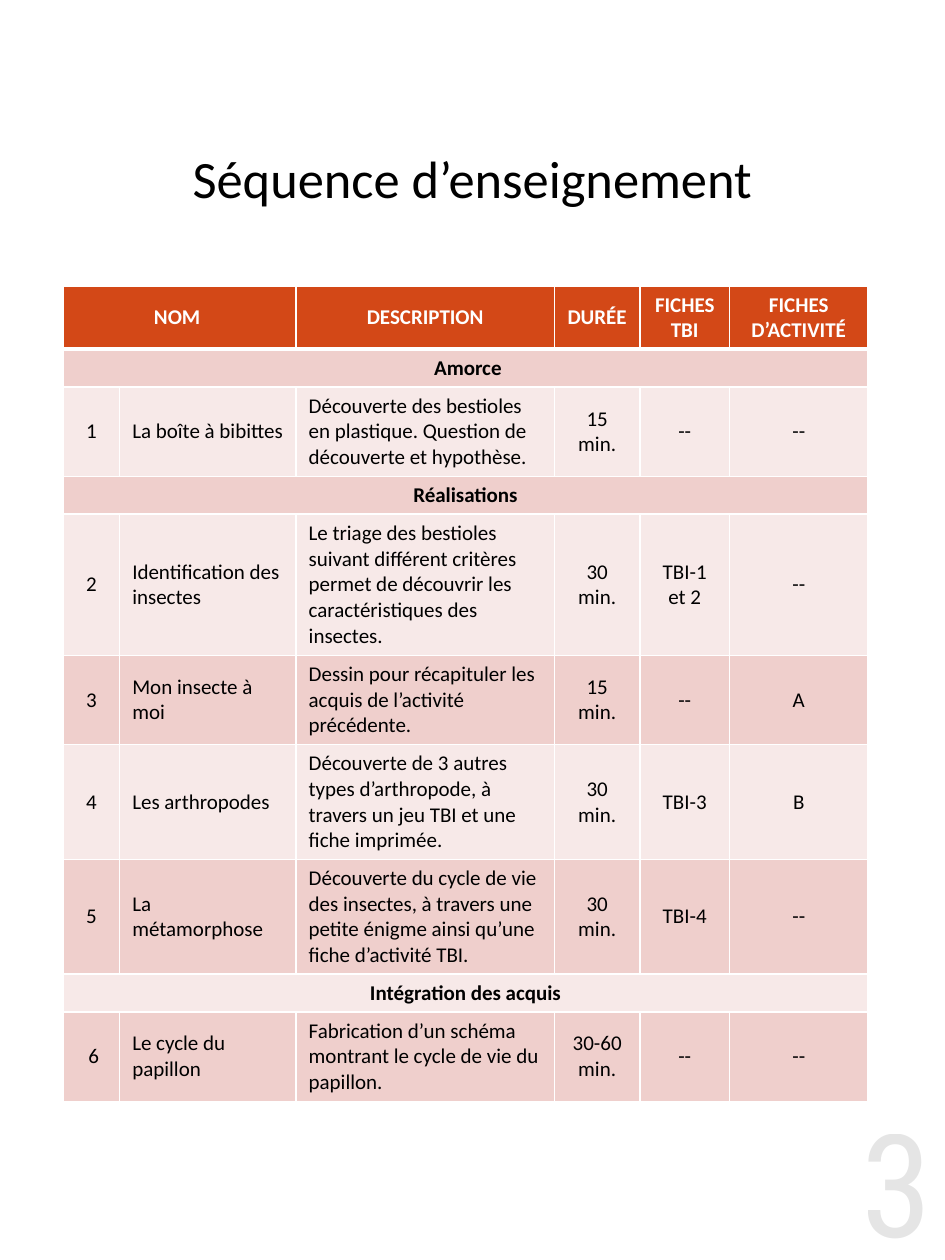
from dataclasses import dataclass

from lxml import etree
from pptx import Presentation
from pptx.dml.color import RGBColor
from pptx.enum.text import MSO_ANCHOR, PP_ALIGN
from pptx.oxml.ns import qn
from pptx.util import Inches, Pt

LEFT, CENTER, RIGHT = PP_ALIGN.LEFT, PP_ALIGN.CENTER, PP_ALIGN.RIGHT
MIDDLE = MSO_ANCHOR.MIDDLE


@dataclass(frozen=True)
class Theme:
    font: str = "Calibri"
    number_font: str = "Roboto Condensed"
    black: str = "000000"
    white: str = "FFFFFF"
    header: str = "D34817"
    band_dark: str = "EFCFCC"
    band_light: str = "F7E9E8"
    title_size: int = 30
    table_size: int = 12
    number_size: int = 82
    number_opacity: int = 10


@dataclass(frozen=True)
class Section:
    name: str
    height: float = 0.3


@dataclass(frozen=True)
class Activity:
    number: str
    name: str
    description: str
    duration: str
    board_sheet: str
    activity_sheet: str
    height: float

    def texts(self) -> list[str]:
        return [self.number, self.name, self.description,
                self.duration, self.board_sheet, self.activity_sheet]


THEME = Theme()
COLUMN_WIDTHS = [0.45, 1.4, 2.05, 0.68, 0.71, 1.1]
HEADER_HEIGHT = 0.5
HEADERS = ["NOM ", "", "DESCRIPTION", "DURÉE", "FICHES TBI", "FICHES D’ACTIVITÉ"]
LEFT_ALIGNED_COLUMNS = (1, 2)
FIRST_NARROW_COLUMN = 3
ROWS = [
    Section(" Amorce"),
    Activity("1", "La boîte à bibittes",
             "Découverte des bestioles en plastique. Question de découverte et hypothèse.",
             "15 min.", "--", "--", 0.71),
    Section("Réalisations"),
    Activity("2", "Identification des insectes",
             "Le triage des bestioles suivant différent critères permet de découvrir "
             "les caractéristiques des insectes.",
             "30 min.", "TBI-1 et 2", "--", 1.12),
    Activity("3", "Mon insecte à moi",
             "Dessin pour récapituler les acquis de l’activité précédente.",
             "15 min.", "--", "A", 0.71),
    Activity("4", "Les arthropodes",
             "Découverte de 3 autres types d’arthropode, à travers un jeu TBI "
             "et une fiche imprimée.",
             "30 min.", "TBI-3", "B", 0.91),
    Activity("5", "La métamorphose",
             "Découverte du cycle de vie des insectes, à travers une petite énigme "
             "ainsi qu’une fiche d’activité TBI.",
             "30 min.", "TBI-4", "--", 0.91),
    Section("Intégration des acquis"),
    Activity(" 6", "Le cycle du papillon",
             "Fabrication d’un schéma montrant le cycle de vie du papillon.",
             "30-60 min.", "--", "--", 0.71),
]


def write(frame, text: str, size: int, color: str, align, font: str = THEME.font,
          bold: bool = False):
    """Set one formatted paragraph and return its span."""
    frame.text = text
    frame.word_wrap = True
    para = frame.paragraphs[0]
    para.alignment = align
    span = para.runs[0]
    span.font.name = font
    span.font.size = Pt(size)
    span.font.bold = bold
    span.font.color.rgb = RGBColor.from_string(color)
    return span


def add_text(page, left: float, top: float, width: float, height: float):
    box = page.shapes.add_textbox(Inches(left), Inches(top), Inches(width), Inches(height))
    box.text_frame.vertical_anchor = MIDDLE
    return box.text_frame


def set_borders(cell, top: int = 1, bottom: int = 1) -> None:
    properties = cell._tc.get_or_add_tcPr()
    widths = {"a:lnL": 1, "a:lnR": 1, "a:lnT": top, "a:lnB": bottom}
    for position, (tag, width) in enumerate(widths.items()):
        line = etree.Element(qn(tag), w=str(Pt(width)))
        fill = etree.SubElement(line, qn("a:solidFill"))
        etree.SubElement(fill, qn("a:srgbClr"), val=THEME.white)
        properties.insert(position, line)


def style_cell(cell, text: str, fill: str, color: str, align, bold: bool) -> None:
    cell.vertical_anchor = MIDDLE
    cell.fill.solid()
    cell.fill.fore_color.rgb = RGBColor.from_string(fill)
    if text:
        write(cell.text_frame, text, THEME.table_size, color, align, bold=bold)


def add_header(table) -> None:
    table.rows[0].height = Inches(HEADER_HEIGHT)
    table.cell(0, 0).merge(table.cell(0, 1))
    for column, text in enumerate(HEADERS):
        cell = table.cell(0, column)
        style_cell(cell, text, THEME.header, THEME.white, CENTER, True)
        set_borders(cell, bottom=3)
        if column >= FIRST_NARROW_COLUMN:
            cell.margin_left = cell.margin_right = Inches(0.04)


def add_row(table, index: int, row: Section | Activity) -> None:
    table.rows[index].height = Inches(row.height)
    is_section = isinstance(row, Section)
    last = len(COLUMN_WIDTHS) - 1
    if is_section:
        table.cell(index, 0).merge(table.cell(index, last))
        texts = [row.name] + [""] * last
    else:
        texts = row.texts()
    fill = THEME.band_dark if index % 2 else THEME.band_light
    for column, text in enumerate(texts):
        cell = table.cell(index, column)
        align = LEFT if column in LEFT_ALIGNED_COLUMNS else CENTER
        style_cell(cell, text, fill, THEME.black, align, is_section)
        set_borders(cell, top=3 if index == 1 else 1)


def add_sequence_table(page) -> None:
    height = HEADER_HEIGHT + sum(row.height for row in ROWS)
    table = page.shapes.add_table(
        len(ROWS) + 1, len(COLUMN_WIDTHS), Inches(0.5), Inches(2.27),
        Inches(sum(COLUMN_WIDTHS)), Inches(height)).table
    for column, width in zip(table.columns, COLUMN_WIDTHS):
        column.width = Inches(width)
    add_header(table)
    for index, row in enumerate(ROWS, start=1):
        add_row(table, index, row)


def main() -> None:
    deck = Presentation()
    deck.slide_width, deck.slide_height = Inches(7.5), Inches(10)
    page = deck.slides.add_slide(deck.slide_layouts[6])

    # Page number, mostly transparent
    number = write(add_text(page, 6.28, 8.75, 1.22, 1.24), "3", THEME.number_size,
                   THEME.black, RIGHT, THEME.number_font)
    color = number._r.find(".//" + qn("a:srgbClr"))
    etree.SubElement(color, qn("a:alpha"), val=str(THEME.number_opacity * 1000))

    # Title
    write(add_text(page, 0, 0.93, 7.5, 0.95), "Séquence d’enseignement",
          THEME.title_size, THEME.black, CENTER)

    # Teaching sequence
    add_sequence_table(page)
    deck.save("out.pptx")


if __name__ == "__main__":
    main()
